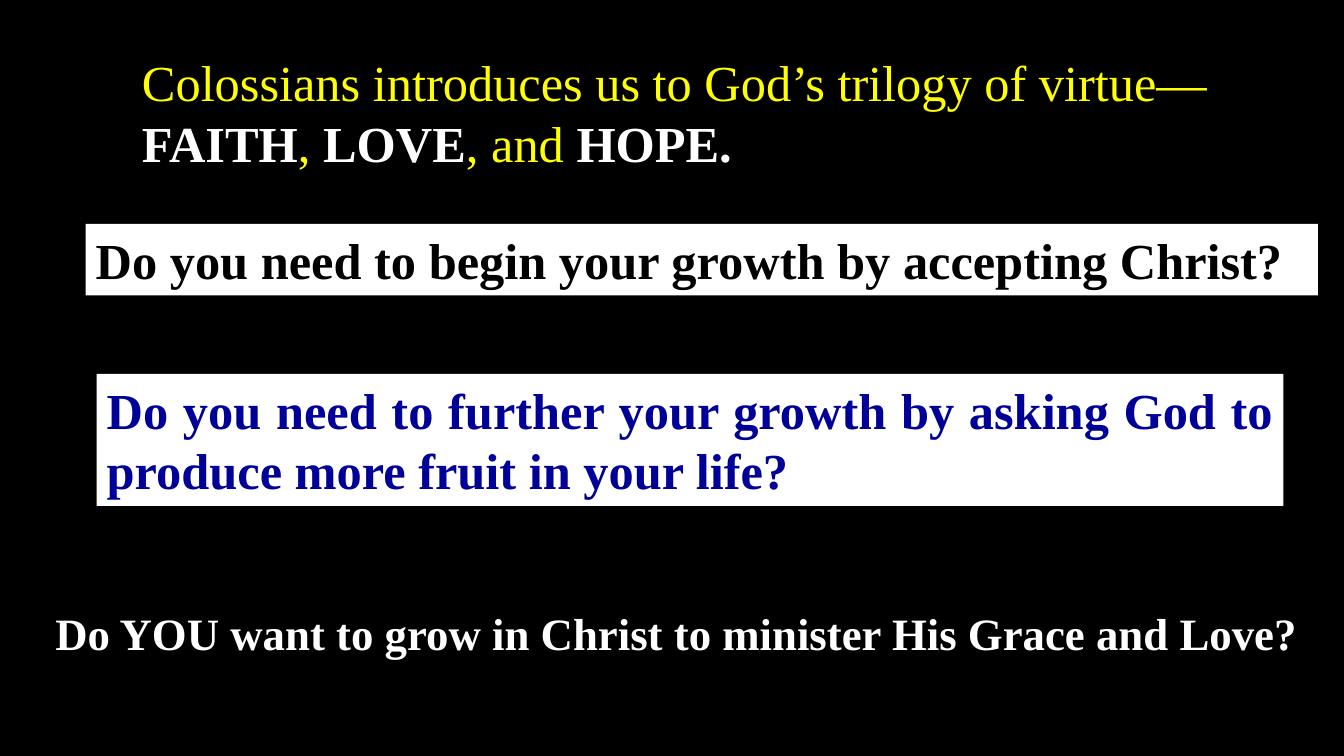
from pptx import Presentation
from pptx.dml.color import RGBColor
from pptx.enum.shapes import MSO_SHAPE
from pptx.enum.text import MSO_ANCHOR, MSO_AUTO_SIZE, PP_ALIGN
from pptx.util import Inches, Pt

RECTANGLE = MSO_SHAPE.RECTANGLE
TOP = MSO_ANCHOR.TOP
GROW = MSO_AUTO_SIZE.SHAPE_TO_FIT_TEXT
LEFT, JUSTIFY = PP_ALIGN.LEFT, PP_ALIGN.JUSTIFY

BLACK, WHITE, YELLOW, NAVY = "000000", "FFFFFF", "FFFF00", "000099"
FONT = "Times New Roman"
BLANK_LAYOUT = 6


def color(code):
    """Turn a hex string into a colour."""
    return RGBColor.from_string(code)


def paint(fill, code):
    """Give a fill one solid colour."""
    fill.solid()
    fill.fore_color.rgb = color(code)


def write(box, spans, size, align=LEFT):
    """Write one paragraph of (text, colour, bold) spans into a box."""
    frame = box.text_frame
    frame_format = {"word_wrap": True, "auto_size": GROW, "vertical_anchor": TOP}
    for name, value in frame_format.items():
        setattr(frame, name, value)
    para = frame.paragraphs[0]
    para.alignment = align
    for text, code, bold in spans:
        span = para.add_run()
        span.text = text
        for name, value in {"name": FONT, "size": Pt(size), "bold": bold}.items():
            setattr(span.font, name, value)
        span.font.color.rgb = color(code)


def add_statement(page, place, spans, size):
    """Add plain text on the slide background."""
    box = page.shapes.add_textbox(*map(Inches, place))
    write(box, spans, size)


def add_question(page, place, text, code, align):
    """Add a bold question on a white panel."""
    box = page.shapes.add_shape(RECTANGLE, *map(Inches, place))
    box.shadow.inherit = False
    paint(box.fill, WHITE)
    box.line.fill.background()
    write(box, [(text, code, True)], 36, align)


def main():
    """Build and save the slide."""
    deck = Presentation()
    deck.slide_width, deck.slide_height = Inches(13.33), Inches(7.5)
    page = deck.slides.add_slide(deck.slide_layouts[BLANK_LAYOUT])
    paint(page.background.fill, BLACK)

    closing = "Do YOU want to grow in Christ to minister His Grace and Love?"
    add_statement(page, (0.45, 5.96, 12.8, 0.64), [(closing, WHITE, True)], 32)

    trilogy = [
        ("Colossians introduces us to God’s trilogy of virtue—", YELLOW, False),
        ("FAITH", WHITE, True),
        (", ", YELLOW, False),
        ("LOVE", WHITE, True),
        (", and ", YELLOW, False),
        ("HOPE.", WHITE, True),
    ]
    add_statement(page, (1.31, 0.46, 11.11, 1.31), trilogy, 36)

    add_question(page, (0.85, 2.22, 12.22, 0.71),
                 "Do you need to begin your growth by accepting Christ?", BLACK, LEFT)
    add_question(page, (0.96, 3.71, 11.77, 1.31),
                 "Do you need to further your growth by asking God to "
                 "produce more fruit in your life?", NAVY, JUSTIFY)
    deck.save("out.pptx")


if __name__ == "__main__":
    main()
